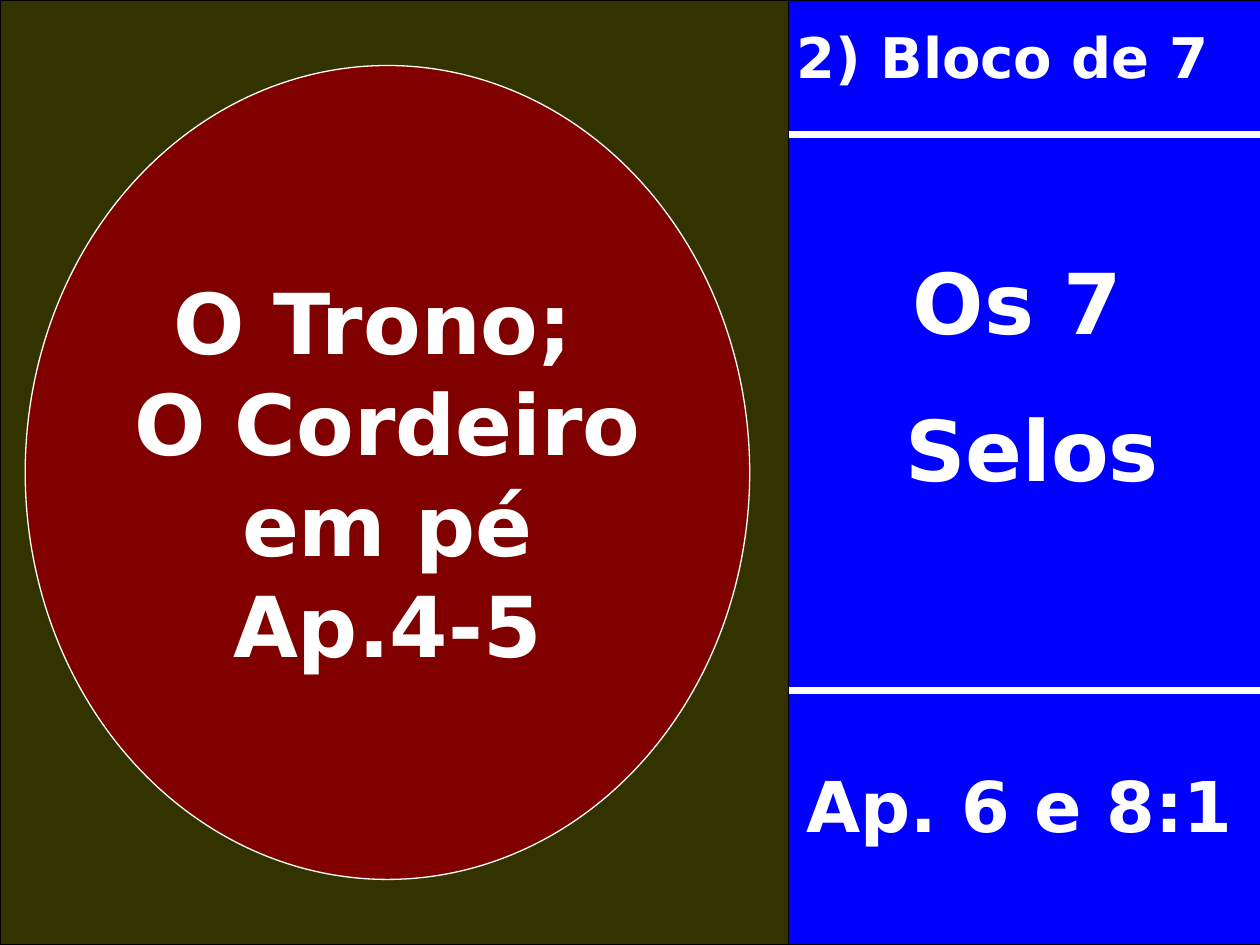
from lxml import etree
from pptx import Presentation
from pptx.dml.color import RGBColor
from pptx.enum.shapes import MSO_CONNECTOR, MSO_SHAPE
from pptx.enum.text import MSO_ANCHOR, MSO_AUTO_SIZE, PP_ALIGN
from pptx.oxml.ns import qn
from pptx.util import Inches, Pt

LEFT, CENTER = PP_ALIGN.LEFT, PP_ALIGN.CENTER
TOP, MIDDLE = MSO_ANCHOR.TOP, MSO_ANCHOR.MIDDLE
RECTANGLE, OVAL = MSO_SHAPE.RECTANGLE, MSO_SHAPE.OVAL
STRAIGHT = MSO_CONNECTOR.STRAIGHT
FIT_SHAPE, FIT_NONE = MSO_AUTO_SIZE.SHAPE_TO_FIT_TEXT, MSO_AUTO_SIZE.NONE

BLUE = RGBColor(0x00, 0x00, 0xFF)
OLIVE = RGBColor(0x33, 0x33, 0x00)
MAROON = RGBColor(0x80, 0x00, 0x00)
WHITE = RGBColor(0xFF, 0xFF, 0xFF)
BLACK = RGBColor(0x00, 0x00, 0x00)
FONT = "DejaVu Sans"

# Page and columns, in inches
WIDTH, HEIGHT = 10, 7.5
PANEL_LEFT, PANEL_RIGHT = 6.18, 10.04
OLIVE_WIDTH = 6.26


def inches(*lengths):
    return [Inches(length) for length in lengths]


def add_block(page, kind, place, fill, line):
    block = page.shapes.add_shape(kind, *inches(*place))
    block.shadow.inherit = False
    block.fill.solid()
    block.fill.fore_color.rgb = fill
    block.line.color.rgb = line
    block.line.width = Pt(0.75)
    return block


def add_divider(page, left, height):
    divider = page.shapes.add_connector(
        STRAIGHT, *inches(left, height, PANEL_RIGHT, height))
    divider.line.color.rgb = WHITE
    divider.line.width = Pt(4)
    etree.SubElement(divider.element.spPr, qn("a:effectLst"))


def write(shape, lines, size, align=CENTER, anchor=TOP, wrap=True,
          fit=FIT_SHAPE, gap=0):
    """Fill a shape with bold white lines, gap points apart."""
    frame = shape.text_frame
    frame.text = "\n".join(lines)
    frame.word_wrap = wrap
    frame.auto_size = fit
    frame.vertical_anchor = anchor
    for index, para in enumerate(frame.paragraphs):
        para.alignment = align
        para.line_spacing = 1.0
        para.space_before = Pt(gap if index else 0)
        para.font.name = FONT
        para.font.size = Pt(size)
        para.font.bold = True
        para.font.color.rgb = WHITE


def add_label(page, place, lines, size, **options):
    write(page.shapes.add_textbox(*inches(*place)), lines, size, **options)


def place_title(page, place, text, size):
    title = page.shapes.title
    title.left, title.top, title.width, title.height = inches(*place)
    write(title, [text], size, align=LEFT)
    # Bring the title in front of the panels
    title.element.getparent().append(title.element)


def main():
    deck = Presentation()
    deck.slide_width, deck.slide_height = inches(WIDTH, HEIGHT)
    page = deck.slides.add_slide(deck.slide_layouts[5])

    # Blue panel and its dividers; the olive panel overlaps their left ends
    add_block(page, RECTANGLE,
              (PANEL_LEFT, 0, PANEL_RIGHT - PANEL_LEFT, HEIGHT), BLUE, BLACK)
    add_divider(page, PANEL_LEFT, 1.07)
    add_divider(page, 6.1, 5.48)
    add_block(page, RECTANGLE, (0, 0, OLIVE_WIDTH, HEIGHT), OLIVE, BLACK)

    # Throne scene
    throne = add_block(page, OVAL, (0.2, 0.52, 5.75, 6.46), MAROON, WHITE)
    write(throne, ["O Trono; ", "O Cordeiro", "em pé", "Ap.4-5"], 48,
          anchor=MIDDLE, wrap=False, fit=FIT_NONE)

    # Panel texts
    place_title(page, (6.22, 0.13, 3.74, 0.63), "2) Bloco de 7", 32)
    add_label(page, (6.34, 1.94, 3.47, 2.1), ["Os 7", " Selos"], 48, gap=26.4)
    add_label(page, (PANEL_LEFT, 6, WIDTH - PANEL_LEFT, 0.77),
              ["Ap. 6 e 8:1"], 40)

    deck.save("out.pptx")


if __name__ == "__main__":
    main()
